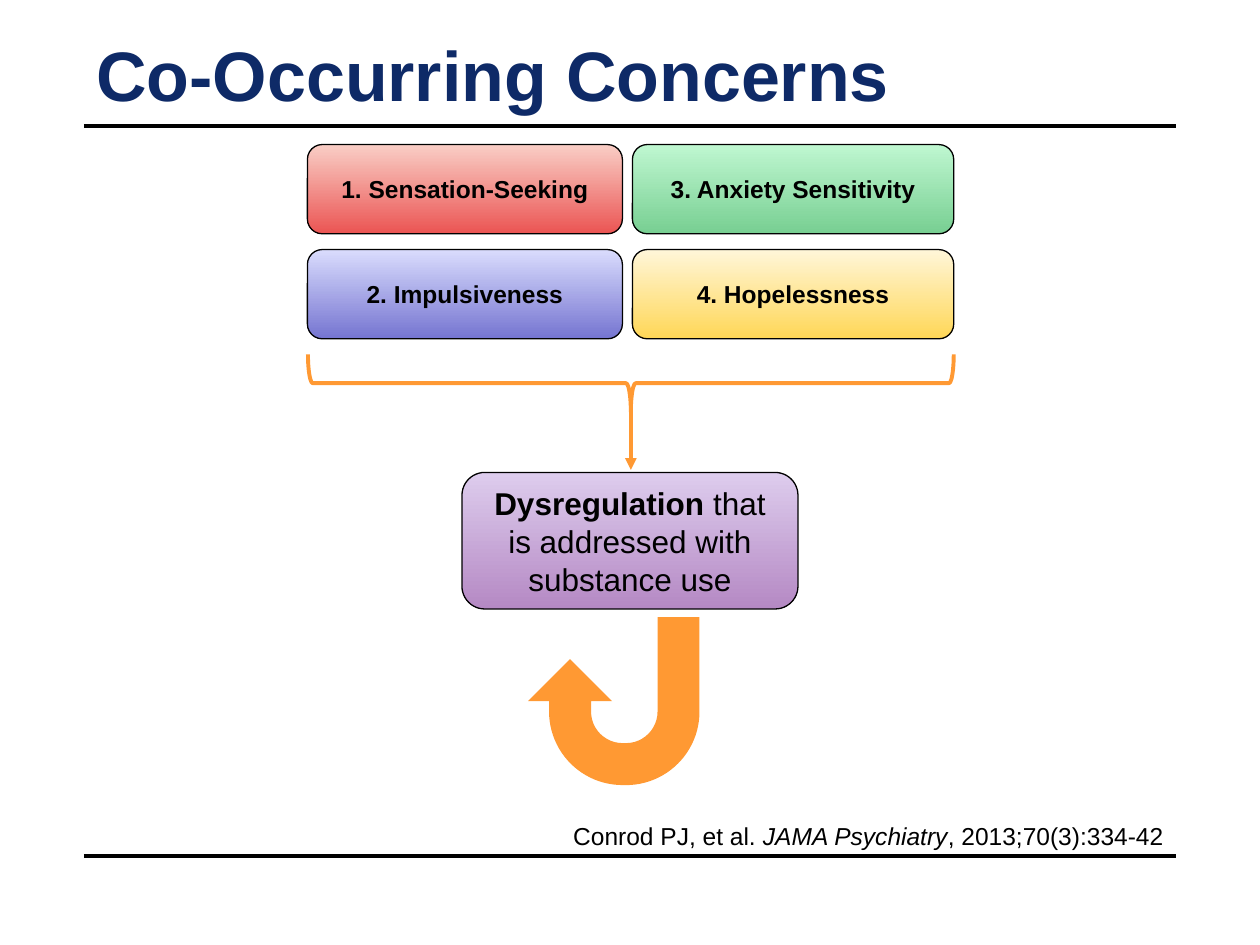
from pptx import Presentation
from pptx.dml.color import RGBColor
from pptx.enum.shapes import MSO_CONNECTOR as Link, MSO_SHAPE as Shape
from pptx.enum.text import MSO_ANCHOR as Anchor, PP_ALIGN as Align
from pptx.oxml.ns import qn
from pptx.util import Pt
from lxml.etree import SubElement


def color(hex_code):
    return RGBColor.from_string(hex_code)


def points(*lengths):
    return [Pt(length) for length in lengths]


class SlideBuilder:
    FONT = "Arial"
    BLACK, NAVY, ORANGE = "000000", "0E2A67", "FF9933"
    THIN, THICK = 0.75, 2.25

    def __init__(self, slide):
        self.slide = slide

    def set_runs(self, frame, runs, size, align, anchor, ink=BLACK):
        """Fill a frame with one paragraph of (text, format values) runs."""
        frame.word_wrap = True
        frame.vertical_anchor = anchor
        paragraph = frame.paragraphs[0]
        paragraph.alignment = align
        for text, changes in runs:
            run = paragraph.add_run()
            run.text = text
            values = {"name": self.FONT, "size": Pt(size), **changes}
            for attribute, value in values.items():
                setattr(run.font, attribute, value)
            run.font.color.rgb = color(ink)

    def text(self, box, runs, size, align, ink=BLACK, bottom_inset=3.6):
        frame = self.slide.shapes.add_textbox(*points(*box)).text_frame
        frame.margin_bottom = Pt(bottom_inset)
        self.set_runs(frame, runs, size, align, Anchor.BOTTOM, ink)

    def shape(self, kind, box, rotation=0):
        item = self.slide.shapes.add_shape(kind, *points(*box))
        item.shadow.inherit = False
        item.rotation = rotation
        return item

    def card(self, box, top_color, bottom_color, runs, size):
        card = self.shape(Shape.ROUNDED_RECTANGLE, box)
        card.fill.gradient()
        card.fill.gradient_angle = 270
        for stop, shade, position in zip(card.fill.gradient_stops,
                                         (top_color, bottom_color), (0, 1)):
            stop.color.rgb = color(shade)
            stop.position = position
        card.line.color.rgb = color(self.BLACK)
        card.line.width = Pt(self.THIN)
        self.set_runs(card.text_frame, runs, size, Align.CENTER,
                      Anchor.MIDDLE)

    def brace(self, box, rotation):
        brace = self.shape(Shape.RIGHT_BRACE, box, rotation)
        brace.fill.background()
        brace.line.color.rgb = color(self.ORANGE)
        brace.line.width = Pt(self.THICK)

    def block_arrow(self, kind, box, rotation):
        arrow = self.shape(kind, box, rotation)
        arrow.fill.solid()
        arrow.fill.fore_color.rgb = color(self.ORANGE)
        arrow.line.fill.background()

    def line(self, start, end, ink=BLACK, arrow=False):
        link = self.slide.shapes.add_connector(
            Link.STRAIGHT, *points(*start, *end))
        link.line.color.rgb = color(ink)
        link.line.width = Pt(self.THICK)
        properties = link._element.spPr
        if arrow:
            SubElement(properties.find(qn("a:ln")), qn("a:tailEnd"),
                       type="triangle")
        SubElement(properties, qn("a:effectLst"))


def main():
    deck = Presentation()
    deck.slide_width, deck.slide_height = points(720, 540)
    page = SlideBuilder(deck.slides.add_slide(deck.slide_layouts[6]))
    bold = {"bold": True}
    left, width = 48, 624

    # Rules, title and citation
    for rule_y in (489, 72):
        page.line((left, rule_y), (left + width, rule_y))
    page.text((left, 12, width, 54), [("Co-Occurring Concerns", bold)],
              40, Align.LEFT, page.NAVY, bottom_inset=0)
    citation = [("Conrod PJ, et al. ", {}),
                ("JAMA Psychiatry", {"italic": True}),
                (", 2013;70(3):334-42", {})]
    page.text((left, 465, width, 24.25), citation, 14, Align.RIGHT)

    # Concerns, numbered down each column
    columns = [(175.7, 180), (361.4, 183.6)]
    first_row, row_step, card_height = 82.6, 60, 51
    concerns = [
        ("1. Sensation-Seeking", "F9CEC6", "EB5553"),
        ("2. Impulsiveness", "DADCFD", "7575D1"),
        ("3. Anxiety Sensitivity", "BFF7D1", "78CF92"),
        ("4. Hopelessness", "FFF6D9", "FFD757"),
    ]
    for index, (concern, top_color, bottom_color) in enumerate(concerns):
        column, row = divmod(index, 2)
        x, card_width = columns[column]
        box = (x, first_row + row * row_step, card_width, card_height)
        page.card(box, top_color, bottom_color, [(concern, bold)], 14)

    # Brace and arrow leading to the outcome
    center = 360.5
    page.brace((center - 16.5, 34.5, 33, 369), 90)
    page.line((center, 235.5), (center, 268.5), page.ORANGE, arrow=True)

    # Outcome and the loop back
    outcome = [("Dysregulation ", bold),
               ("that is addressed with substance use", {})]
    page.card((264, 270, 192, 78), "DDCCED", "B589C4", outcome, 18)
    page.block_arrow(Shape.U_TURN_ARROW, (301.7, 352.6, 98, 96), 180)

    deck.save("out.pptx")


if __name__ == "__main__":
    main()
